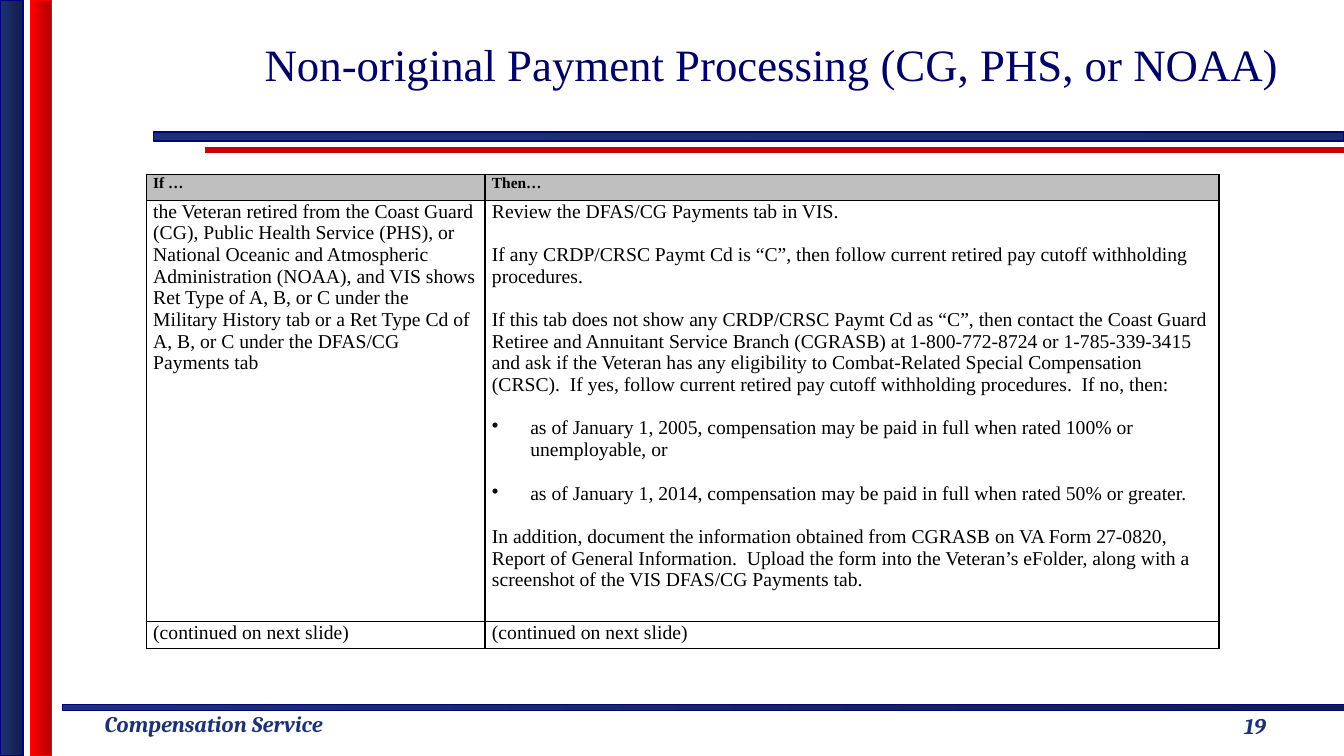
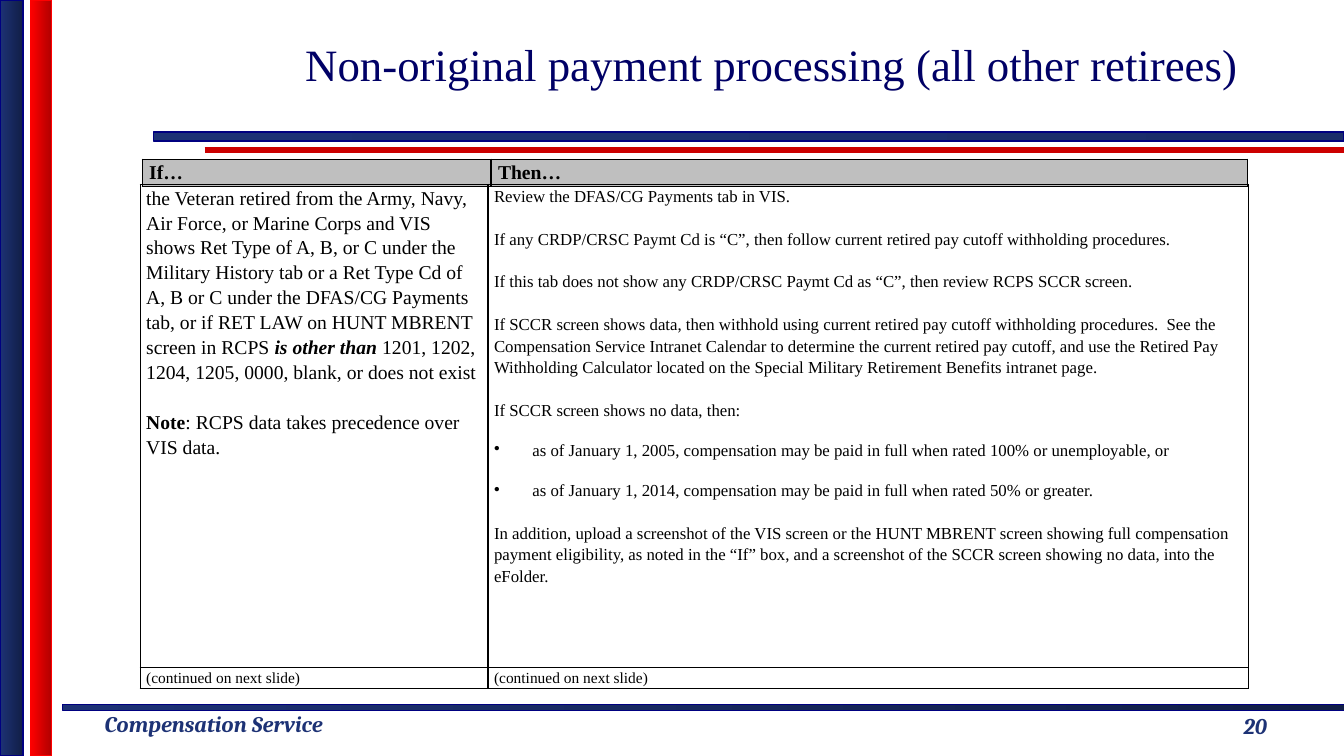
"""Build two slides on non-original payment processing."""
from lxml.etree import SubElement
from pptx import Presentation
from pptx.dml.color import RGBColor
from pptx.enum.shapes import MSO_CONNECTOR, MSO_SHAPE
from pptx.enum.text import MSO_ANCHOR, PP_ALIGN
from pptx.oxml import parse_xml
from pptx.oxml.ns import nsdecls, qn
from pptx.util import Inches, Pt

NAVY = RGBColor(0x1D, 0x32, 0x75)
DARK = RGBColor(0x11, 0x1E, 0x46)
DUSK = RGBColor(0x1A, 0x2D, 0x69)
EDGE = RGBColor(0x00, 0x00, 0x80)
RED = RGBColor(0xFF, 0x00, 0x00)
MAROON = RGBColor(0xB2, 0x00, 0x00)
CRIMSON = RGBColor(0xCC, 0x00, 0x00)
TITLE = RGBColor(0x00, 0x00, 0x66)
BLACK = RGBColor(0x00, 0x00, 0x00)
GREY = RGBColor(0xBF, 0xBF, 0xBF)
SERIF = "Times New Roman"
BRAND = "Cambria"
BULLET = "• "

BANDS = [
    (0.62, 6.99, 12.72, 0.06, NAVY, DARK, EDGE),
    (1.52, 1.31, 11.81, 0.09, NAVY, DUSK, EDGE),
    (0, 0, 0.23, 7.5, NAVY, DARK, EDGE),
    (0.3, 0, 0.21, 7.5, RED, MAROON, RED),
]

REVIEW = "Review the DFAS/CG Payments tab in VIS."
CUTOFF = ("If any CRDP/CRSC Paymt Cd is “C”, then follow current retired pay "
          "cutoff withholding procedures.")
DATES = [
    BULLET + "as of January 1, 2005, compensation may be paid in full when "
    "rated 100% or unemployable, or",
    BULLET + "as of January 1, 2014, compensation may be paid in full when "
    "rated 50% or greater.",
]
MORE = ["(continued on next slide)"]

GUARD_IF = [
    "the Veteran retired from the Coast Guard (CG), Public Health Service "
    "(PHS), or National Oceanic and Atmospheric Administration (NOAA), and "
    "VIS shows Ret Type of A, B, or C under the Military History tab or a "
    "Ret Type Cd of A, B, or C under the DFAS/CG Payments tab",
]
GUARD_THEN = [
    REVIEW,
    CUTOFF,
    "If this tab does not show any CRDP/CRSC Paymt Cd as “C”, then contact "
    "the Coast Guard Retiree and Annuitant Service Branch (CGRASB) at "
    "1-800-772-8724 or 1-785-339-3415 and ask if the Veteran has any "
    "eligibility to Combat-Related Special Compensation (CRSC).  If yes, "
    "follow current retired pay cutoff withholding procedures.  If no, then:",
    *DATES,
    "In addition, document the information obtained from CGRASB on VA Form "
    "27-0820, Report of General Information.  Upload the form into the "
    "Veteran’s eFolder, along with a screenshot of the VIS DFAS/CG Payments "
    "tab.",
]
OTHER_IF = [
    [("the Veteran retired from the Army, Navy, Air Force, or Marine Corps "
      "and VIS shows Ret Type of A, B, or C under the Military History tab "
      "or a Ret Type Cd of A, B or C under the DFAS/CG Payments tab, or if "
      "RET LAW on HUNT MBRENT screen in RCPS ", False, False),
     ("is other than", True, True),
     (" 1201, 1202, 1204, 1205, 0000, blank, or does not exist",
      False, False)],
    [("Note", True, False),
     (": RCPS data takes precedence over VIS data.", False, False)],
]
OTHER_THEN = [
    REVIEW,
    CUTOFF,
    "If this tab does not show any CRDP/CRSC Paymt Cd as “C”, then review "
    "RCPS SCCR screen.",
    "If SCCR screen shows data, then withhold using current retired pay "
    "cutoff withholding procedures.  See the Compensation Service Intranet "
    "Calendar to determine the current retired pay cutoff, and use the "
    "Retired Pay Withholding Calculator located on the Special Military "
    "Retirement Benefits intranet page.",
    "If SCCR screen shows no data, then:",
    *DATES,
    "In addition, upload a screenshot of the VIS screen or the HUNT MBRENT "
    "screen showing full compensation payment eligibility, as noted in the "
    "“If” box, and a screenshot of the SCCR screen showing no data, into the "
    "eFolder.",
]

GUARD = dict(
    at=(1.45, 1.73), cols=(3.36, 7.28), rows=(0.26, 4.18, 0.26), pad=0.07,
    lead=1, head=True,
    cells=[[(11, ["If …"]), (11, ["Then…"])],
           [(14, GUARD_IF), (14, GUARD_THEN)],
           [(14, MORE), (14, MORE)]])
HEAD = dict(
    at=(1.41, 1.58), cols=(3.46, 7.5), rows=(0.25,), pad=0.07,
    lead=1.15, head=True,
    cells=[[(14, ["If…"]), (14, ["Then…"])]])
OTHER = dict(
    at=(1.39, 1.83), cols=(3.45, 7.54), rows=(4.79, 0.18), pad=0.06,
    lead=1.15, head=False,
    cells=[[(14, OTHER_IF), (12, OTHER_THEN)],
           [(11, MORE), (11, MORE)]])

SLIDES = [
    ("Non-original Payment Processing (CG, PHS, or NOAA)", [GUARD]),
    ("Non-original payment processing (all other retirees)", [HEAD, OTHER]),
]


def add_text(slide, box, text, size, face, color, strong, center):
    """Add a one-line text box."""
    frame = slide.shapes.add_textbox(*map(Inches, box)).text_frame
    frame.word_wrap = center
    para = frame.paragraphs[0]
    para.text = text
    if center:
        frame.vertical_anchor = MSO_ANCHOR.MIDDLE
        para.alignment = PP_ALIGN.CENTER
    font = para.font
    font.size, font.name = Pt(size), face
    font.bold = font.italic = strong
    font.color.rgb = color


def fill_cell(cell, size, paras, pad, lead, head):
    """Write paragraphs into a cell, then border and shade it."""
    cell.margin_left = cell.margin_right = Inches(pad)
    cell.margin_top = cell.margin_bottom = 0
    frame = cell.text_frame
    for i, text in enumerate(paras):
        para = frame.add_paragraph() if i else frame.paragraphs[0]
        runs = [(text, head, False)] if isinstance(text, str) else text
        listed = runs[0][0].startswith(BULLET)
        if i:
            para.space_before = Pt(size * lead * 1.11)
        if listed:
            props = para._p.get_or_add_pPr()
            props.set("marL", str(Inches(0.38)))
            props.set("indent", str(-Inches(0.38)))
            SubElement(props, qn("a:buChar")).set("char", BULLET.strip())
        elif lead != 1:
            para.line_spacing = lead
        for words, bold, italic in runs:
            run = para.add_run()
            run.text = words.removeprefix(BULLET)
            run.font.bold, run.font.italic = bold, italic
        font = para.font
        font.size, font.name = Pt(size), SERIF
        font.color.rgb = BLACK
    props = cell._tc.get_or_add_tcPr()
    for i, side in enumerate("LRTB"):
        props.insert(i, parse_xml(
            f'<a:ln{side} {nsdecls("a")} w="{Pt(1)}"><a:solidFill>'
            f'<a:srgbClr val="{BLACK}"/></a:solidFill></a:ln{side}>'))
    if head:
        cell.fill.solid()
        cell.fill.fore_color.rgb = GREY
    else:
        cell.fill.background()


deck = Presentation()
deck.slide_width, deck.slide_height = Inches(13.33), Inches(7.5)

for number, (title, tables) in enumerate(SLIDES, 19):
    slide = deck.slides.add_slide(deck.slide_layouts[6])
    rule = slide.shapes.add_connector(
        MSO_CONNECTOR.STRAIGHT, Inches(2.03), Inches(1.49),
        Inches(13.33), Inches(1.49))
    rule.line.color.rgb, rule.line.width = CRIMSON, Pt(4)
    SubElement(rule._element.spPr, qn("a:effectLst"))
    for *box, start, end, edge in BANDS:
        band = slide.shapes.add_shape(MSO_SHAPE.RECTANGLE, *map(Inches, box))
        band.shadow.inherit = False
        band.fill.gradient()
        band.fill.gradient_angle = 0
        for stop, color in zip(band.fill.gradient_stops, (start, end)):
            stop.color.rgb = color
        band.line.color.rgb, band.line.width = edge, Pt(1)

    add_text(slide, (0.94, 7, 2.82, 0.37), "Compensation Service",
             16, BRAND, NAVY, True, False)
    add_text(slide, (2.34, 0, 10.63, 1.26), title,
             32, SERIF, TITLE, False, True)
    add_text(slide, (11.56, 6.95, 1.78, 0.5), str(number),
             16, BRAND, NAVY, True, True)

    for item in tables:
        cols, rows = item["cols"], item["rows"]
        size = (sum(cols), sum(rows))
        table = slide.shapes.add_table(
            len(rows), len(cols), *map(Inches, item["at"] + size)).table
        table.first_row = table.horz_banding = False
        for col, width in zip(table.columns, cols):
            col.width = Inches(width)
        for r, (row, height) in enumerate(zip(table.rows, rows)):
            row.height = Inches(height)
            for cell, (points, paras) in zip(row.cells, item["cells"][r]):
                fill_cell(cell, points, paras, item["pad"], item["lead"],
                          item["head"] and r == 0)

deck.save("out.pptx")
